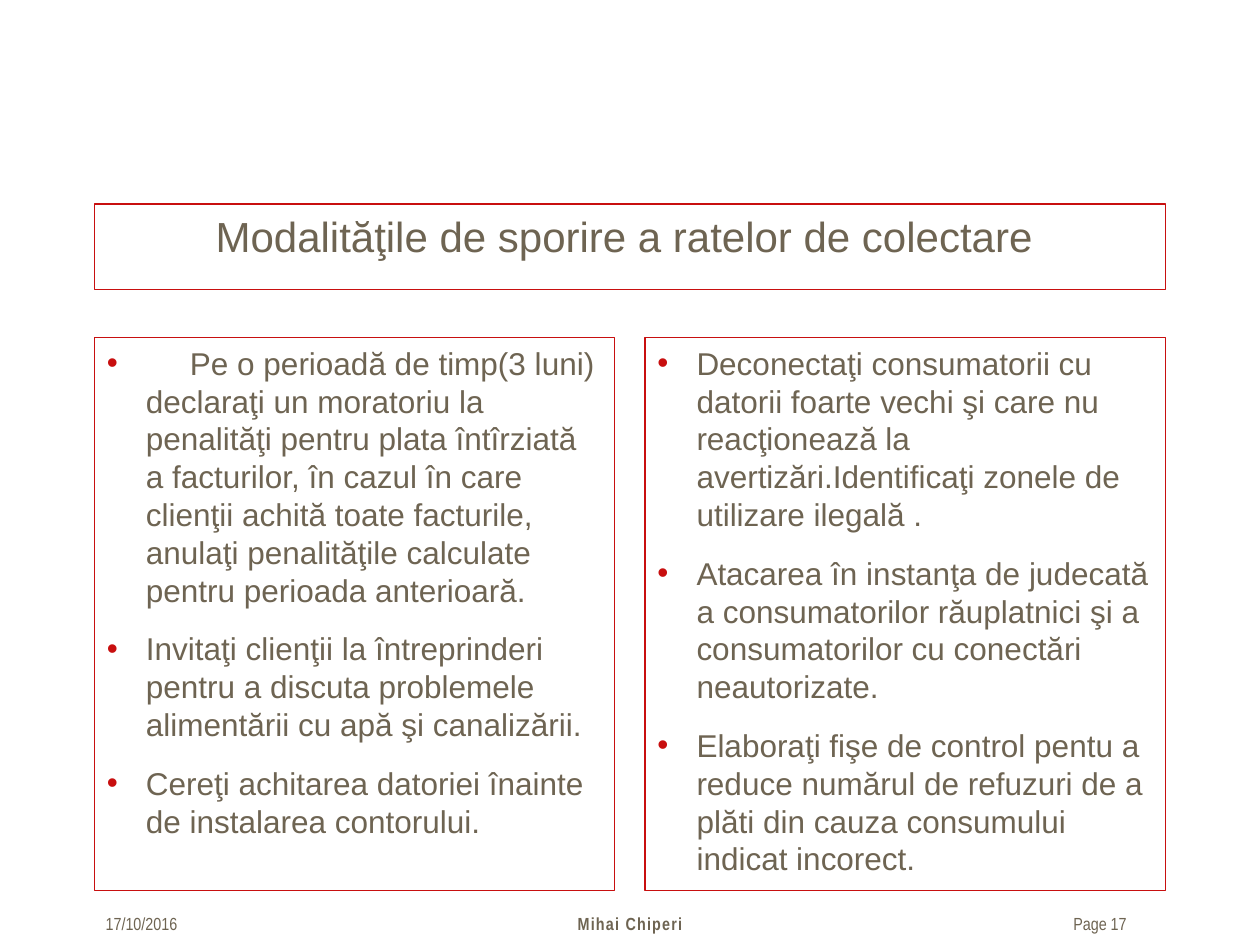
from pptx import Presentation
from pptx.dml.color import RGBColor as RGB
from pptx.enum.shapes import MSO_SHAPE as Shape
from pptx.enum.text import MSO_ANCHOR as Anchor, PP_ALIGN as Align
from pptx.oxml import parse_xml
from pptx.oxml.ns import nsdecls
from pptx.util import Inches, Pt

RED, BROWN = "C80F0F", "6E6452"
TITLE = {"name": "Arial", "size": Pt(24)}
BODY = {"name": "Arial", "size": Pt(18)}
SMALL = {"name": "Arial Narrow", "size": Pt(10)}


def tint(color, code):
    color.rgb = RGB.from_string(code)


def style(font, look):
    for key, val in look.items():
        setattr(font, key, val)
    tint(font.color, BROWN)


deck = Presentation()
deck.slide_width, deck.slide_height = Inches(10), Inches(7.5)
slide = deck.slides.add_slide(deck.slide_layouts[6])

# Framed boxes: title and two columns
head = ["Modalităţile de sporire a ratelor de colectare "]
left = [
    "\tPe o perioadă de timp(3 luni) declaraţi un moratoriu la penalităţi pentru plata "
    "întîrziată a facturilor, în cazul în care clienţii achită toate facturile, anulaţi "
    "penalităţile calculate pentru perioada anterioară.",
    "Invitaţi clienţii la întreprinderi pentru a discuta problemele alimentării cu apă "
    "şi canalizării.",
    "Cereţi achitarea datoriei înainte de instalarea contorului.",
]
right = [
    "Deconectaţi consumatorii cu datorii foarte vechi şi care nu reacţionează la "
    "avertizări.Identificaţi zonele de utilizare ilegală .",
    "Atacarea în instanţa de judecată a consumatorilor răuplatnici şi a consumatorilor "
    "cu conectări neautorizate.",
    "Elaboraţi fişe de control pentu a reduce numărul de refuzuri de a plăti din cauza "
    "consumului indicat incorect.",
]
boxes = [
    (0.75, 1.62, 8.5, 0.68, head, TITLE),
    (0.75, 2.68, 4.13, 4.39, left, BODY),
    (5.12, 2.68, 4.13, 4.39, right, BODY),
]
for x, y, w, h, lines, look in boxes:
    box = slide.shapes.add_shape(Shape.RECTANGLE, Inches(x), Inches(y), Inches(w), Inches(h))
    box.shadow.inherit = False
    box.fill.background()
    box.line.width = Pt(0.75)
    tint(box.line.color, RED)
    frame = box.text_frame
    frame.word_wrap, frame.vertical_anchor = True, Anchor.TOP
    for i, line in enumerate(lines):
        para = frame.paragraphs[0] if i == 0 else frame.add_paragraph()
        para.text = line
        para.alignment = Align.CENTER
        if look is BODY:
            para.alignment = Align.LEFT
            para.space_before, para.space_after = Pt(4 if i else 0), Pt(8)
            # Hanging red bullet, with a tab stop for an indented opening
            props = para._p.get_or_add_pPr()
            props.set("marL", str(Inches(0.31)))
            props.set("indent", str(-Inches(0.31)))
            for part in (
                f'<a:buClr {nsdecls("a")}><a:srgbClr val="{RED}"/></a:buClr>',
                f'<a:buFont {nsdecls("a")} typeface="Arial"/>',
                f'<a:buChar {nsdecls("a")} char="•"/>',
                f'<a:tabLst {nsdecls("a")}><a:tab pos="{Inches(0.66)}" algn="l"/></a:tabLst>',
            ):
                props.append(parse_xml(part))
        style(para.runs[0].font, look)

# Footer: date, author, page
feet = [
    (0.74, 1.42, "17/10/2016", Align.LEFT, {}),
    (3.13, 3.74, "Mihai Chiperi", Align.CENTER, {"bold": True}),
    (8.42, 1.01, "Page 17", Align.LEFT, {}),
]
for x, w, text, align, more in feet:
    box = slide.shapes.add_textbox(Inches(x), Inches(7.2), Inches(w), Inches(0.27))
    frame = box.text_frame
    frame.word_wrap = True
    para = frame.paragraphs[0]
    para.text, para.alignment = text, align
    run = para.runs[0]
    style(run.font, SMALL | more)
    if more:
        run._r.get_or_add_rPr().set("spc", "70")

deck.save("out.pptx")
